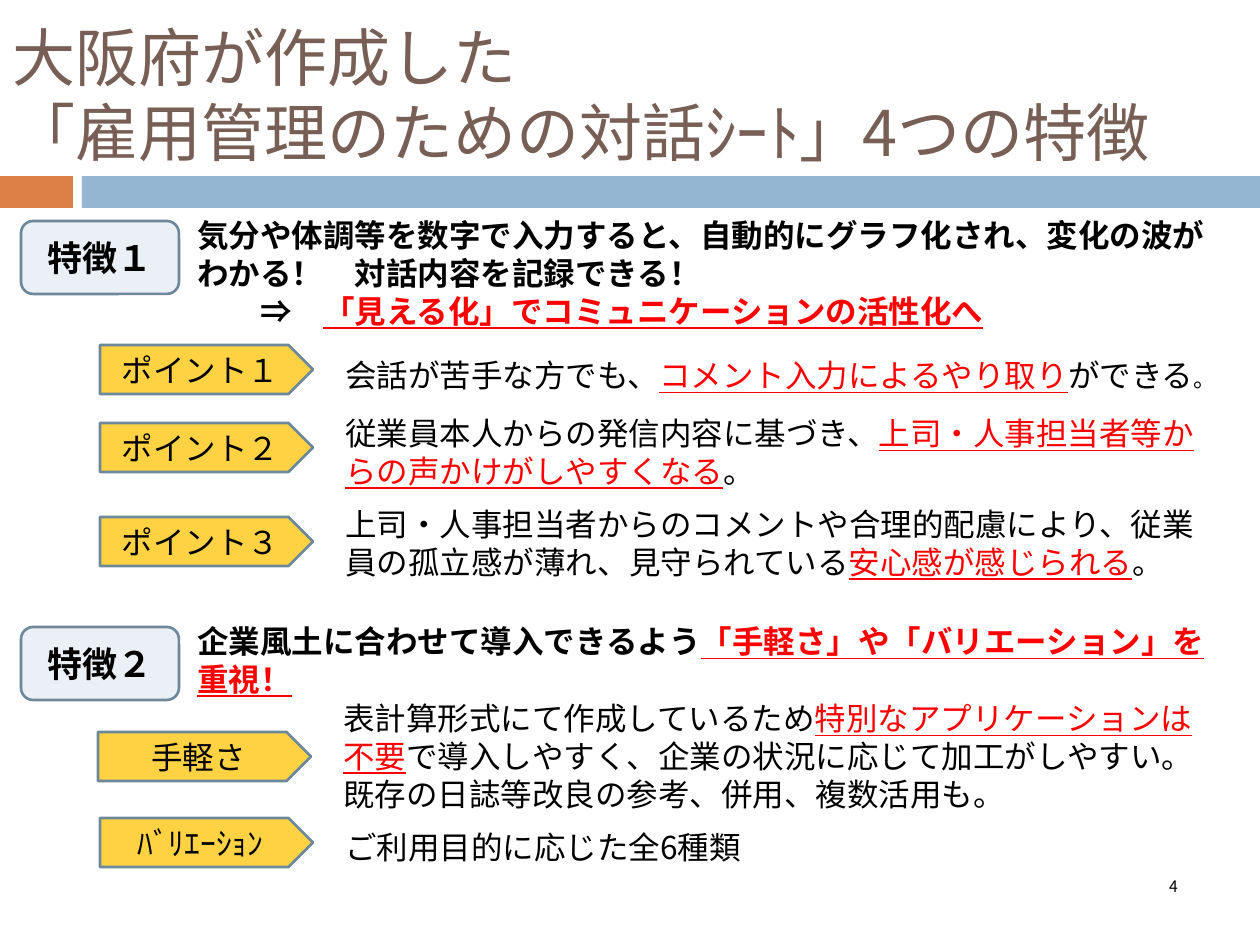
from lxml import etree
from pptx import Presentation
from pptx.dml.color import RGBColor
from pptx.enum.shapes import MSO_SHAPE
from pptx.enum.text import MSO_ANCHOR, PP_ALIGN
from pptx.oxml.ns import qn
from pptx.util import Emu, Pt

RECT = MSO_SHAPE.RECTANGLE
ROUNDED = MSO_SHAPE.ROUNDED_RECTANGLE
PENTAGON = MSO_SHAPE.PENTAGON
TOP, MIDDLE = MSO_ANCHOR.TOP, MSO_ANCHOR.MIDDLE
LEFT, CENTER = PP_ALIGN.LEFT, PP_ALIGN.CENTER

FONT = "Noto Sans CJK JP"
BLACK = RGBColor(0x00, 0x00, 0x00)
RED = RGBColor(0xFF, 0x00, 0x00)
BROWN = RGBColor(0x77, 0x5F, 0x55)
ORANGE = RGBColor(0xDD, 0x80, 0x47)
BLUE = RGBColor(0x94, 0xB6, 0xD2)
PALE_BLUE = RGBColor(0xEA, 0xF0, 0xF6)
YELLOW = RGBColor(0xFF, 0xD2, 0x43)
SLATE = RGBColor(0x6D, 0x87, 0x9B)

PX_PER_INCH = 126
KEY = {"color": RED, "underline": True}  # emphasised words


def px(length):
    return Emu(round(length * 914400 / PX_PER_INCH))


def write(shape, lines, size=18, color=BLACK, bold=False, align=LEFT, anchor=TOP):
    """Fill a shape with lines; a line is a string or a list of (text, format) runs."""
    frame = shape.text_frame
    frame.word_wrap = True
    frame.vertical_anchor = anchor
    for index, line in enumerate(lines):
        paragraph = frame.paragraphs[0] if index == 0 else frame.add_paragraph()
        paragraph.alignment = align
        for text, style in [(line, {})] if isinstance(line, str) else line:
            run = paragraph.add_run()
            run.text = text
            font = run.font
            font.size = Pt(style.get("size", size))
            font.bold = bold
            font.underline = style.get("underline", False)
            font.color.rgb = style.get("color", color)
            font.name = FONT
            east_asian = etree.Element(qn("a:ea"), typeface=FONT)
            font._element.find(qn("a:latin")).addnext(east_asian)


def add_text(slide, box, lines, **style):
    write(slide.shapes.add_textbox(*map(px, box)), lines, **style)


def add_block(slide, kind, box, fill, line=None):
    block = slide.shapes.add_shape(kind, *map(px, box))
    block.shadow.inherit = False
    block.fill.solid()
    block.fill.fore_color.rgb = fill
    if line is None:
        block.line.fill.background()
    else:
        block.line.color.rgb = line
        block.line.width = Pt(1.5)
    return block


def add_header(slide, left, top, width, height):
    add_text(slide, (left, top + 26, width, 136),
             ["大阪府が作成した", "「雇用管理のための対話ｼｰﾄ」4つの特徴"],
             size=36, color=BROWN, anchor=MIDDLE)
    bar_top, bar_height = top + height - 32, 32
    add_block(slide, RECT, (left, bar_top, 73, bar_height), ORANGE)
    add_block(slide, RECT, (left + 82, bar_top, width - 82, bar_height), BLUE)


def add_feature(slide, left, top, width, height, label, lines):
    badge = add_block(slide, ROUNDED, (left, top + 11, 158, 73), PALE_BLUE, SLATE)
    write(badge, [label], size=20, bold=True, align=CENTER, anchor=MIDDLE)
    add_text(slide, (left + 164, top, width - 164, height), lines, bold=True)


def add_point(slide, left, top, width, height, label, lines, tag_offset):
    tag = add_block(slide, PENTAGON, (left, top + tag_offset, 213, 49), YELLOW, SLATE)
    write(tag, [label], align=CENTER, anchor=MIDDLE)
    add_text(slide, (left + 233, top, width - 233, height), lines)


FEATURES = [  # top, height, label, lines
    (210, 127, "特徴１", [
        "気分や体調等を数字で入力すると、自動的にグラフ化され、変化の波が",
        "わかる！　対話内容を記録できる！",
        [("　　⇒　", {}), ("「見える化」でコミュニケーションの活性化へ", KEY)]]),
    (616, 89, "特徴２", [
        [("企業風土に合わせて導入できるよう", {}),
         ("「手軽さ」や「バリエーション」を", KEY)],
        [("重視！", KEY)]]),
]

POINTS = [  # left, top, height, label, lines, offset of the tag
    (100, 350, 50, "ポイント１", [
        [("会話が苦手な方でも、", {}), ("コメント入力によるやり取り", KEY),
         ("ができる", {}), ("。", {"size": 13})]], -5),
    (100, 408, 89, "ポイント２", [
        [("従業員本人からの発信内容に基づき、", {}),
         ("上司・人事担当者等からの声かけがしやすくなる", KEY), ("。", {})]], 15),
    (100, 499, 89, "ポイント３", [
        [("上司・人事担当者からのコメントや合理的配慮により、"
          "従業員の孤立感が薄れ、見守られている", {}),
         ("安心感が感じられる", KEY), ("。", {})]], 18),
    (98, 693, 127, "手軽さ", [
        [("表計算形式にて作成しているため", {}), ("特別なアプリケーションは", KEY)],
        [("不要", KEY), ("で導入しやすく、企業の状況に応じて加工がしやすい。", {})],
        "既存の日誌等改良の参考、併用、複数活用も。"], 39),
    (100, 822, 50, "ﾊﾞﾘｴｰｼｮﾝ", ["ご利用目的に応じた全6種類"], -4),
]


def main():
    deck = Presentation()
    deck.slide_width, deck.slide_height = px(1260), px(945)
    slide = deck.slides.add_slide(deck.slide_layouts[6])

    # Title and colour bar
    add_header(slide, 0, 0, 1260, 208)

    # Two features and their points
    for top, height, label, lines in FEATURES:
        add_feature(slide, 21, top, 1239, height, label, lines)
    for left, top, height, label, lines, tag_offset in POINTS:
        add_point(slide, left, top, 1136, height, label, lines, tag_offset)

    # Page number
    add_text(slide, (1137, 869, 73, 34), ["4"], size=9, align=CENTER, anchor=MIDDLE)

    deck.save("out.pptx")


if __name__ == "__main__":
    main()
